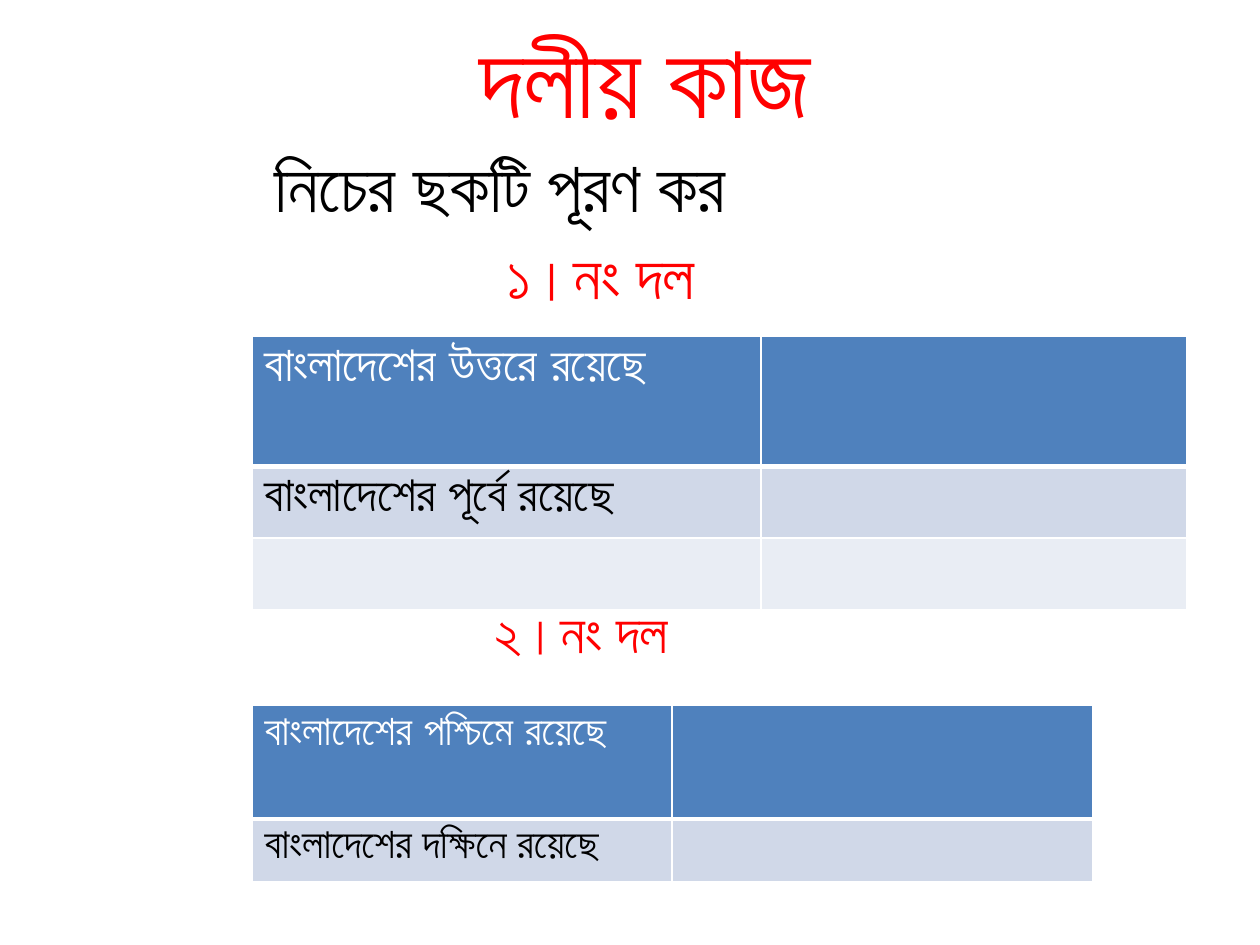
"""Build a Bengali group-work slide with two tables to fill in."""
from dataclasses import dataclass

from lxml import etree
from pptx import Presentation
from pptx.dml.color import RGBColor
from pptx.enum.text import MSO_AUTO_SIZE, PP_ALIGN
from pptx.oxml.ns import qn
from pptx.util import Inches, Pt

CENTER, LEFT = PP_ALIGN.CENTER, PP_ALIGN.LEFT
FIT_SHAPE = MSO_AUTO_SIZE.SHAPE_TO_FIT_TEXT
YA_WITH_NUKTA, SINGLE_YYA = "য" + chr(0x09BC), chr(0x09DF)


@dataclass(frozen=True)
class Theme:
    font: str = "Arial"
    red: str = "FF0000"
    black: str = "000000"
    white: str = "FFFFFF"
    row_fills: tuple = ("4F81BD", "D0D8E8", "E9EDF4")
    title: int = 60
    instruction: int = 40
    first_group: int = 36
    second_group: int = 32
    first_table: int = 28
    second_table: int = 24
    thin_rule: int = 1
    header_rule: int = 3


THEME = Theme()


def add_text(paragraph, text, size, color, bold=None):
    run = paragraph.add_run()
    run.text = text.replace(YA_WITH_NUKTA, SINGLE_YYA)
    run.font.name = THEME.font
    run.font.size = Pt(size)
    run.font.bold = bold
    run.font.color.rgb = RGBColor.from_string(color)


def set_borders(cell, top_width, bottom_width):
    properties = cell._tc.get_or_add_tcPr()
    widths = (THEME.thin_rule, THEME.thin_rule, top_width, bottom_width)
    for position, (side, width) in enumerate(zip("LRTB", widths)):
        line = etree.Element(qn(f"a:ln{side}"), w=str(Pt(width)))
        fill = etree.SubElement(line, qn("a:solidFill"))
        etree.SubElement(fill, qn("a:srgbClr"), val=THEME.white)
        properties.insert(position, line)


prs = Presentation()
prs.slide_width, prs.slide_height = Inches(10), Inches(7.5)
slide = prs.slides.add_slide(prs.slide_layouts[6])

headings = [
    ("দলীয় কাজ", (1.58, 0.06, 7.08, 1.11), THEME.title, THEME.red, CENTER),
    ("১।নং দল", (3.92, 1.83, 2.58, 0.71), THEME.first_group, THEME.red, LEFT),
    ("নিচের ছকটি পূরণ কর", (2.08, 1.08, 6.33, 0.77), THEME.instruction, THEME.black, LEFT),
    ("২।নং দল", (3.83, 4.69, 4.75, 0.64), THEME.second_group, THEME.red, LEFT),
]
for text, place, size, color, align in headings:
    heading = slide.shapes.add_textbox(*map(Inches, place)).text_frame
    heading.word_wrap = True
    heading.auto_size = FIT_SHAPE
    heading.paragraphs[0].alignment = align
    add_text(heading.paragraphs[0], text, size, color)

group_tables = [
    (2.67, (4.04, 3.38), (1.03, 0.57, 0.57), THEME.first_table,
     ("বাংলাদেশের উত্তরে রয়েছে", "বাংলাদেশের পূর্বে রয়েছে", "")),
    (5.6, (6.67 / 2, 6.67 / 2), (0.9, 0.5), THEME.second_table,
     ("বাংলাদেশের পশ্চিমে রয়েছে", "বাংলাদেশের দক্ষিনে রয়েছে")),
]
for top, widths, heights, size, prompts in group_tables:
    table = slide.shapes.add_table(
        len(heights), len(widths), Inches(2), Inches(top),
        Inches(sum(widths)), Inches(sum(heights)),
    ).table
    for column, width in zip(table.columns, widths):
        column.width = Inches(width)
    for index, (row, height, prompt) in enumerate(zip(table.rows, heights, prompts)):
        row.height = Inches(height)
        is_header = index == 0
        top_width = THEME.header_rule if index == 1 else THEME.thin_rule
        bottom_width = THEME.header_rule if is_header else THEME.thin_rule
        for cell in row.cells:
            cell.fill.solid()
            cell.fill.fore_color.rgb = RGBColor.from_string(THEME.row_fills[index])
            set_borders(cell, top_width, bottom_width)
        if prompt:
            color = THEME.white if is_header else THEME.black
            add_text(row.cells[0].text_frame.paragraphs[0], prompt, size, color, is_header)

prs.save("out.pptx")
